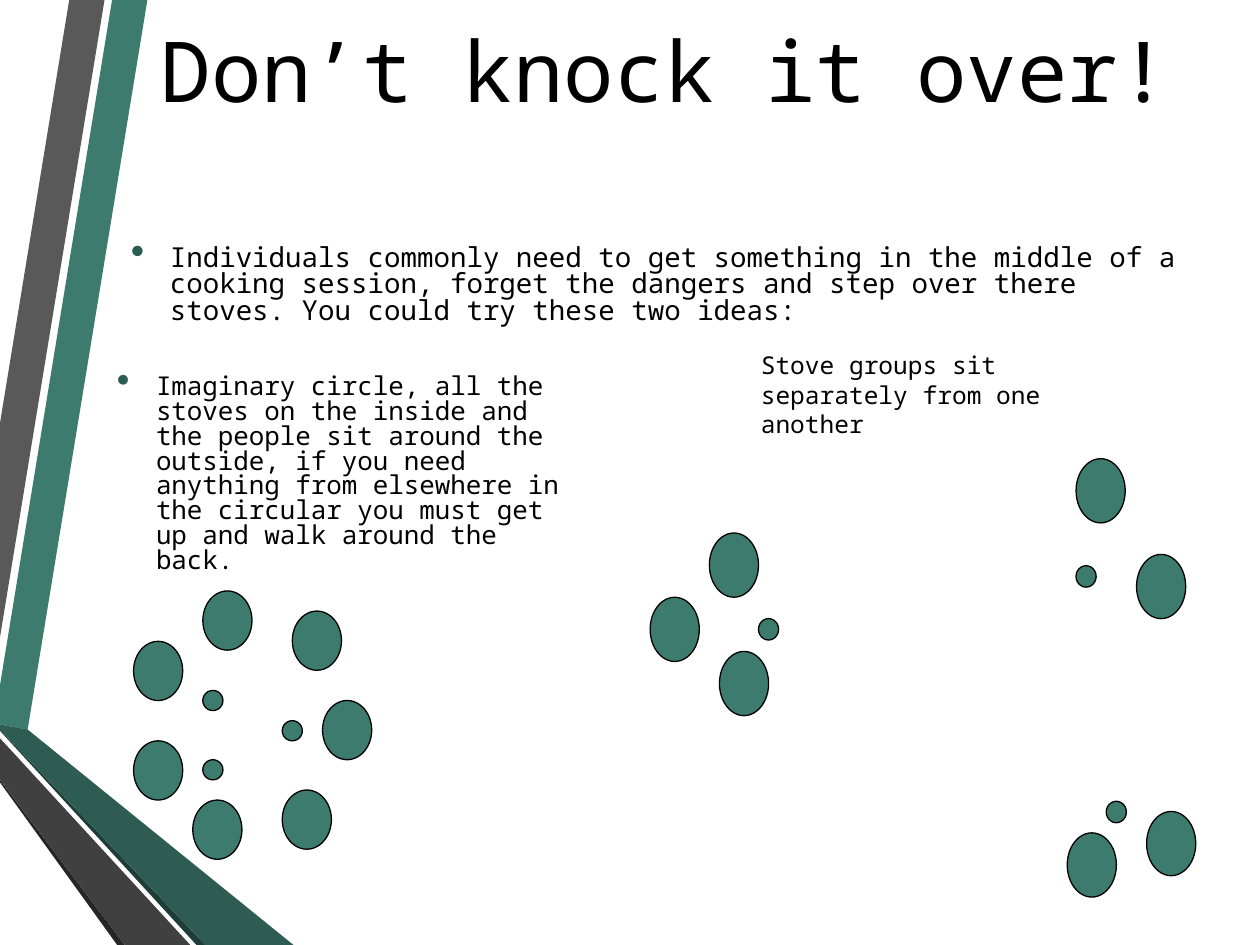
import pptx
import pptx.util
import pptx.dml.color
import pptx.enum.shapes
import pptx.enum.text
import pptx.oxml
import pptx.oxml.ns

Inches, Pt = pptx.util.Inches, pptx.util.Pt
FONT = "Noto Sans Mono"
GREEN, DARK, BLACK = "3D7B6F", "2E5C53", "000000"

# Side bands: colour and corner points
BANDS = [
    (GREEN, [(0, 5.44), (0, 5.75), (0.22, 5.79), (1.17, 0), (0.89, 0)]),
    ("595959", [(0.83, 0), (0.55, 0), (0, 3.36), (0, 5.06)]),
    ("262626", [(0, 6.19), (0, 6.21), (0.93, 7.5), (0.99, 7.5)]),
    ("1F3D38", [(0, 5.79), (0, 5.8), (1.56, 7.5), (1.63, 7.5)]),
    (DARK, [(0, 5.79), (1.63, 7.5), (2.33, 7.5), (0.22, 5.79), (0, 5.75)]),
    ("404040", [(0, 6.19), (0.99, 7.5), (1.51, 7.5), (0, 5.86)]),
]

# People (large) and stoves (small): left and top of each dot
APART_BIG = [(5.63, 4.23), (5.16, 4.74), (5.71, 5.17), (8.54, 3.64),
             (9.02, 4.4), (8.47, 6.61), (9.1, 6.44)]
APART_SMALL = [(6.02, 4.91), (8.54, 4.49), (8.78, 6.36)]
RING_BIG = [(1.06, 5.09), (1.06, 5.88), (1.61, 4.69), (2.32, 4.85),
            (2.56, 5.56), (2.24, 6.27), (1.53, 6.35)]
RING_SMALL = [(1.61, 6.03), (1.61, 5.48), (2.24, 5.72)]


def color(code):
    return pptx.dml.color.RGBColor.from_string(code)


def paint(shape, fill):
    shape.shadow.inherit = False
    shape.fill.solid()
    shape.fill.fore_color.rgb = color(fill)


def band(group, fill, points):
    spots = [(Inches(x), Inches(y)) for x, y in points]
    maker = group.shapes.build_freeform(*spots[0], scale=1.0)
    maker.add_line_segments(spots[1:], close=True)
    shape = maker.convert_to_shape()
    paint(shape, fill)
    shape.line.fill.background()


def dots(shapes, spots, width, height):
    oval = pptx.enum.shapes.MSO_SHAPE.OVAL
    for x, y in spots:
        dot = shapes.add_shape(oval, Inches(x), Inches(y),
                               Inches(width), Inches(height))
        paint(dot, GREEN)
        dot.line.color.rgb = color(BLACK)
        dot.line.width = Pt(0.75)


def write(frame, text, size):
    frame.word_wrap = True
    frame.auto_size = pptx.enum.text.MSO_AUTO_SIZE.NONE
    para = frame.paragraphs[0]
    run = para.add_run()
    run.text = text
    run.font.name = FONT
    run.font.size = Pt(size)
    run.font.color.rgb = color(BLACK)
    return para


def bullet(para):
    props = para._p.get_or_add_pPr()
    props.set("marL", str(Inches(0.31)))
    props.set("indent", str(-Inches(0.31)))
    space = pptx.oxml.ns.nsdecls("a")
    for xml in (f'<a:buClr {space}><a:srgbClr val="{DARK}"/></a:buClr>',
                f'<a:buSzPct {space} val="145000"/>',
                f'<a:buChar {space} char="•"/>'):
        props.append(pptx.oxml.parse_xml(xml))


def note(slide, place, text, size):
    box = slide.shapes.add_textbox(*map(Inches, place))
    return box.text_frame, write(box.text_frame, text, size)


def point(slide, place, text, size, base=0.05):
    frame, para = note(slide, place, text, size)
    frame.vertical_anchor = pptx.enum.text.MSO_ANCHOR.MIDDLE
    frame.margin_bottom = Inches(base)
    para.line_spacing = 0.8
    bullet(para)


def head(slide, text):
    title = slide.shapes.title
    title.left, title.top = Inches(1.06), Inches(0.08)
    title.width, title.height = Inches(8.43), Inches(0.94)
    frame = title.text_frame
    frame.vertical_anchor = pptx.enum.text.MSO_ANCHOR.MIDDLE
    para = write(frame, text, 48)
    para.alignment = pptx.enum.text.PP_ALIGN.CENTER


def main():
    deck = pptx.Presentation()
    deck.slide_width, deck.slide_height = Inches(10), Inches(7.5)
    slide = deck.slides.add_slide(deck.slide_layouts[5])

    # Side bands
    side = slide.shapes.add_group_shape()
    for fill, points in BANDS:
        band(side, fill, points)

    # Title and text
    head(slide, "Don’t knock it over!")
    point(slide, (0.94, 2.04, 8.67, 0.66),
          "Individuals commonly need to get something in the middle of a "
          "cooking session, forget the dangers and step over there stoves. "
          "You could try these two ideas:", 15.7, base=0.25)
    point(slide, (0.83, 1.96, 3.78, 3.62),
          "Imaginary circle, all the stoves on the inside and the people "
          "sit around the outside, if you need anything from elsewhere in "
          "the circular you must get up and walk around the back.", 14.8)

    # Separate stove groups
    apart = slide.shapes.add_group_shape()
    dots(apart.shapes, APART_BIG, 0.39, 0.51)
    dots(apart.shapes, APART_SMALL, 0.16, 0.17)
    note(slide, (5.94, 2.73, 2.84, 0.57),
         "Stove groups sit separately from one another", 14)

    # Circle of people around the stoves
    dots(slide.shapes, RING_BIG, 0.39, 0.47)
    dots(slide.shapes, RING_SMALL, 0.16, 0.16)

    deck.save("out.pptx")


if __name__ == "__main__":
    main()
